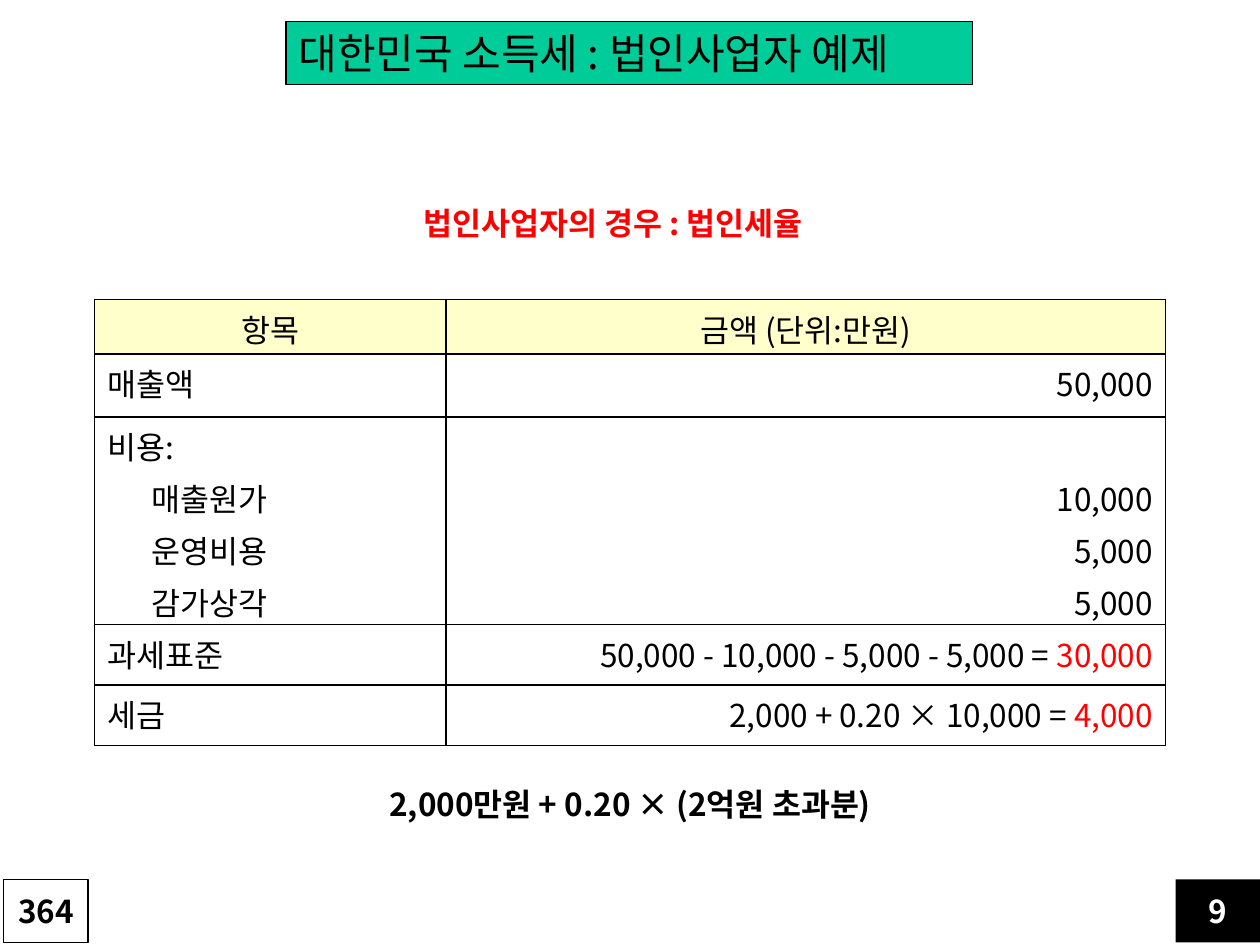
from lxml.etree import SubElement
from pptx import Presentation
from pptx.dml.color import RGBColor
from pptx.enum.shapes import MSO_SHAPE as Shape
from pptx.enum.text import MSO_ANCHOR as Anchor, MSO_AUTO_SIZE as AutoSize, PP_ALIGN as Align
from pptx.oxml.ns import qn
from pptx.util import Inches, Pt

BLACK = RGBColor(0x00, 0x00, 0x00)
WHITE = RGBColor(0xFF, 0xFF, 0xFF)
RED = RGBColor(0xFF, 0x00, 0x00)
GREEN = RGBColor(0x00, 0xCC, 0x99)
CREAM = RGBColor(0xFF, 0xFF, 0xCC)

COLUMNS, ROWS = 40, 30


class TaxSlide:
    """Holds the style and the slide; lengths are columns and rows of the grid."""

    font = "Noto Sans CJK KR"
    body_size = 18
    item_indent = Inches(0.35)
    line_pitch = Inches(0.41)

    def __init__(self, deck):
        self.column = deck.slide_width / COLUMNS
        self.row = deck.slide_height / ROWS
        self.slide = deck.slides.add_slide(deck.slide_layouts[5])

    def box(self, left, top, width, height):
        return (int(left * self.column), int(top * self.row),
                int(width * self.column), int(height * self.row))

    def format_run(self, run, color=BLACK, size=body_size, bold=False):
        run.font.size, run.font.bold = Pt(size), bold
        run.font.color.rgb = color
        run.font.name = self.font
        east_asian = SubElement(run.font._element, qn("a:ea"))
        east_asian.set("typeface", self.font)

    def set_text(self, frame, text, align, anchor=Anchor.MIDDLE, **style):
        frame.text = text
        frame.word_wrap, frame.auto_size = True, AutoSize.NONE
        frame.vertical_anchor = anchor
        frame.margin_left = frame.margin_right = Inches(0.1)
        frame.margin_top = frame.margin_bottom = Inches(0.05)
        paragraph = frame.paragraphs[0]
        paragraph.alignment = align
        self.format_run(paragraph.runs[0], **style)
        return paragraph

    def paint(self, shape, fill, line=None):
        shape.fill.solid()
        shape.fill.fore_color.rgb = fill
        if line is None:
            shape.line.fill.background()
        else:
            shape.line.color.rgb, shape.line.width = line, Pt(0.75)

    def title(self, text, *place):
        heading = self.slide.shapes.title
        heading.left, heading.top, heading.width, heading.height = self.box(*place)
        self.paint(heading, GREEN, BLACK)
        self.set_text(heading.text_frame, text, Align.LEFT, size=24)

    def caption(self, text, *place, align=Align.LEFT, anchor=Anchor.MIDDLE, color=BLACK):
        frame = self.slide.shapes.add_textbox(*self.box(*place)).text_frame
        return self.set_text(frame, text, align, anchor, color=color, bold=True)

    def badge(self, text, *place, fill, color, line=None):
        number = self.slide.shapes.add_shape(Shape.RECTANGLE, *self.box(*place))
        number.shadow.inherit = False
        self.paint(number, fill, line)
        self.set_text(number.text_frame, text, Align.CENTER, color=color, bold=True)

    def table(self, records, left, top, widths, heights):
        place = self.box(left, top, sum(widths), sum(heights))
        grid = self.slide.shapes.add_table(len(heights), len(widths), *place).table
        grid.horz_banding = grid.first_row = False
        for column, width in zip(grid.columns, widths):
            column.width = int(width * self.column)
        for row, height in zip(grid.rows, heights):
            row.height = int(height * self.row)
        for r, record in enumerate(records):
            for c, lines in enumerate(record):
                align = Align.CENTER if r == 0 else (Align.LEFT, Align.RIGHT)[c]
                self.cell(grid.cell(r, c), lines, align, CREAM if r == 0 else None)
        return grid

    def cell(self, cell, lines, align, fill):
        cell.margin_left = cell.margin_right = Inches(0.1)
        cell.margin_top, cell.margin_bottom = Inches(0.05), 0
        self.border(cell)
        if fill is None:
            cell.fill.background()
        else:
            cell.fill.solid()
            cell.fill.fore_color.rgb = fill
        cell.text_frame.text = "\n".join(text for text, _ in lines)
        for paragraph, (_, result) in zip(cell.text_frame.paragraphs, lines):
            paragraph.alignment = align
            paragraph.space_before = Pt(0.2 * self.body_size)
            self.format_run(paragraph.runs[0])
            if result:
                answer = paragraph.add_run()
                answer.text = result
                self.format_run(answer, RED)

    def border(self, cell):
        properties = cell._tc.get_or_add_tcPr()
        for side in ("a:lnL", "a:lnR", "a:lnT", "a:lnB"):
            edge = SubElement(properties, qn(side), w=str(Pt(1)))
            color = SubElement(SubElement(edge, qn("a:solidFill")), qn("a:srgbClr"))
            color.set("val", str(BLACK))

    def indent_items(self, label_cell, amount_cell):
        """Indents the lines below a label and starts the amounts one line lower."""
        for item in label_cell.text_frame.paragraphs[1:]:
            item._p.get_or_add_pPr().set("marL", str(self.item_indent))
        amount_cell.margin_top += self.line_pitch


def plain(*texts):
    return [(text, "") for text in texts]


def main():
    deck = Presentation()
    deck.slide_width, deck.slide_height = Inches(10), Inches(7.5)
    page = TaxSlide(deck)

    # Heading and subheading
    page.title("대한민국 소득세 : 법인사업자 예제", 9.08, 0.68, 21.8, 2)
    page.caption("법인사업자의 경우 : 법인세율", 13.04, 6.28, 13.92, 1.6, color=RED)

    # Income statement
    statement = page.table(
        [
            (plain("항목"), plain("금액 (단위:만원)")),
            (plain("매출액"), plain("50,000")),
            (plain("비용:", "매출원가", "운영비용", "감가상각"),
             plain("10,000", "5,000", "5,000")),
            (plain("과세표준"), [("50,000 - 10,000 - 5,000 - 5,000 = ", "30,000")]),
            (plain("세금"), [("2,000 + 0.20 × 10,000 = ", "4,000")]),
        ],
        3, 9.5, widths=(11.16, 22.84), heights=(1.74, 2, 6.52, 1.92, 1.92))
    page.indent_items(statement.cell(2, 0), statement.cell(2, 1))

    # Tax formula
    formula = page.caption("2,000만원 + 0.20 × (2억원 초과분)", 11.96, 24.92, 16.08, 1.6,
                           align=Align.CENTER, anchor=Anchor.TOP)
    formula.line_spacing = 0.83

    # Page numbers
    page.badge("9", 37.32, 27.92, 2.68, 2, fill=BLACK, color=WHITE)
    page.badge("364", 0.12, 27.92, 2.68, 2, fill=WHITE, color=BLACK, line=BLACK)

    deck.save("out.pptx")


if __name__ == "__main__":
    main()
